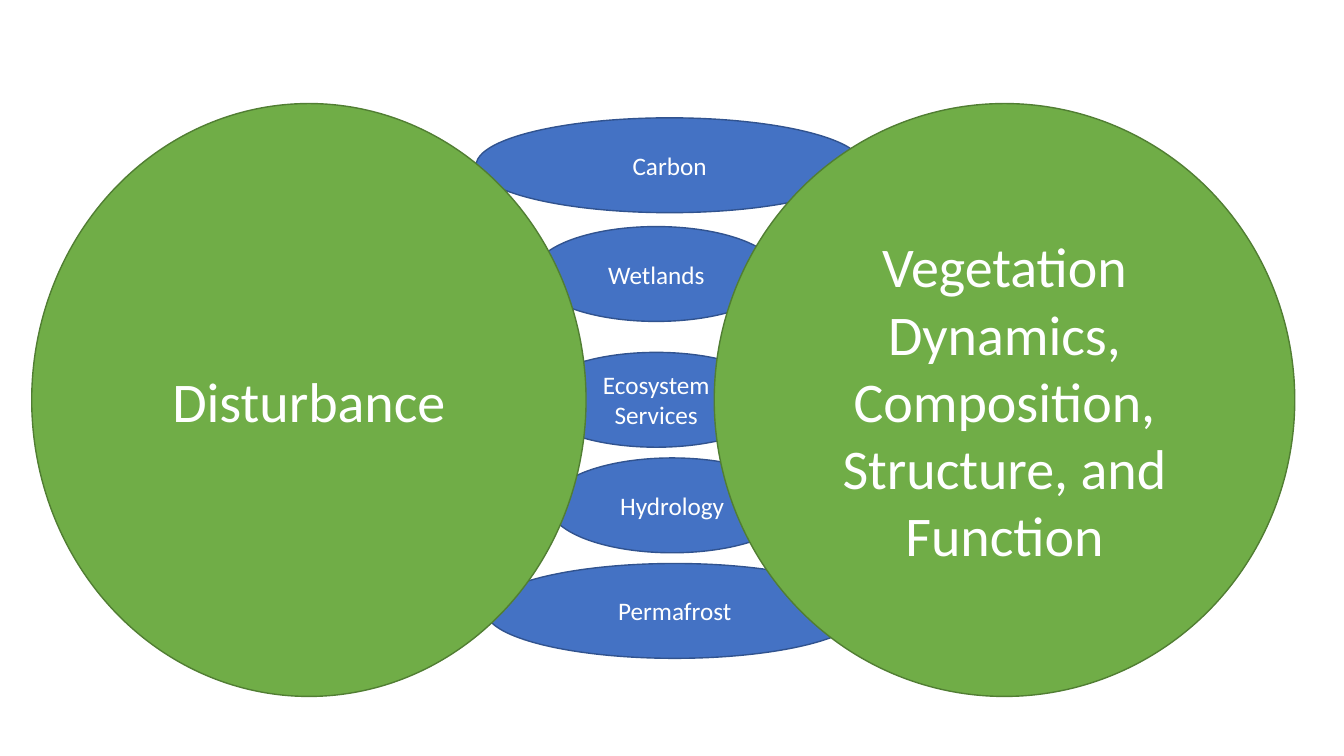
from pptx import Presentation
from pptx.dml.color import RGBColor
from pptx.enum import shapes, text
from pptx.util import Cm, Pt

BLUE = RGBColor(0x44, 0x72, 0xC4)
DARK_BLUE = RGBColor(0x31, 0x53, 0x8F)
GREEN = RGBColor(0x70, 0xAD, 0x47)
DARK_GREEN = RGBColor(0x51, 0x7E, 0x33)
WHITE = RGBColor(0xFF, 0xFF, 0xFF)

LINK_HEIGHT = 2.39
THEME_TOP = 2.61
THEME_HEIGHT = 14.94

LINKS = [
    ("Hydrology", 13.84, 11.54, 6.2),
    ("Permafrost", 12.24, 14.2, 9.53),
    ("Carbon", 12, 2.97, 9.75),
    ("Ecosystem Services", 13.44, 8.88, 6.2),
    ("Wetlands", 13.44, 5.71, 6.2),
]
THEMES = [
    ("Vegetation Dynamics, Composition, Structure, and Function", 18, 14.63),
    ("Disturbance", 0.8, 13.97),
]


def add_ellipse(slide, label, left, top, width, height, fill, outline, size):
    shape = slide.shapes.add_shape(
        shapes.MSO_SHAPE.OVAL, Cm(left), Cm(top), Cm(width), Cm(height)
    )
    shape.shadow.inherit = False
    shape.fill.solid()
    shape.fill.fore_color.rgb = fill
    shape.line.color.rgb = outline
    shape.line.width = Pt(1)
    text_frame = shape.text_frame
    text_frame.text = label
    text_frame.word_wrap = True
    text_frame.vertical_anchor = text.MSO_ANCHOR.MIDDLE
    paragraph = text_frame.paragraphs[0]
    paragraph.alignment = text.PP_ALIGN.CENTER
    font = paragraph.runs[0].font
    font.name = "Calibri"
    font.size = Pt(size)
    font.color.rgb = WHITE


def add_link(slide, label, left, top, width):
    add_ellipse(slide, label, left, top, width, LINK_HEIGHT, BLUE, DARK_BLUE, 18)


def add_theme(slide, label, left, width):
    add_ellipse(
        slide, label, left, THEME_TOP, width, THEME_HEIGHT, GREEN, DARK_GREEN, 40
    )


def main():
    presentation = Presentation()
    presentation.slide_width = Cm(33.87)
    presentation.slide_height = Cm(19.05)
    slide = presentation.slides.add_slide(presentation.slide_layouts[6])
    for link in LINKS:
        add_link(slide, *link)
    for theme in THEMES:
        add_theme(slide, *theme)
    presentation.save("out.pptx")


if __name__ == "__main__":
    main()
